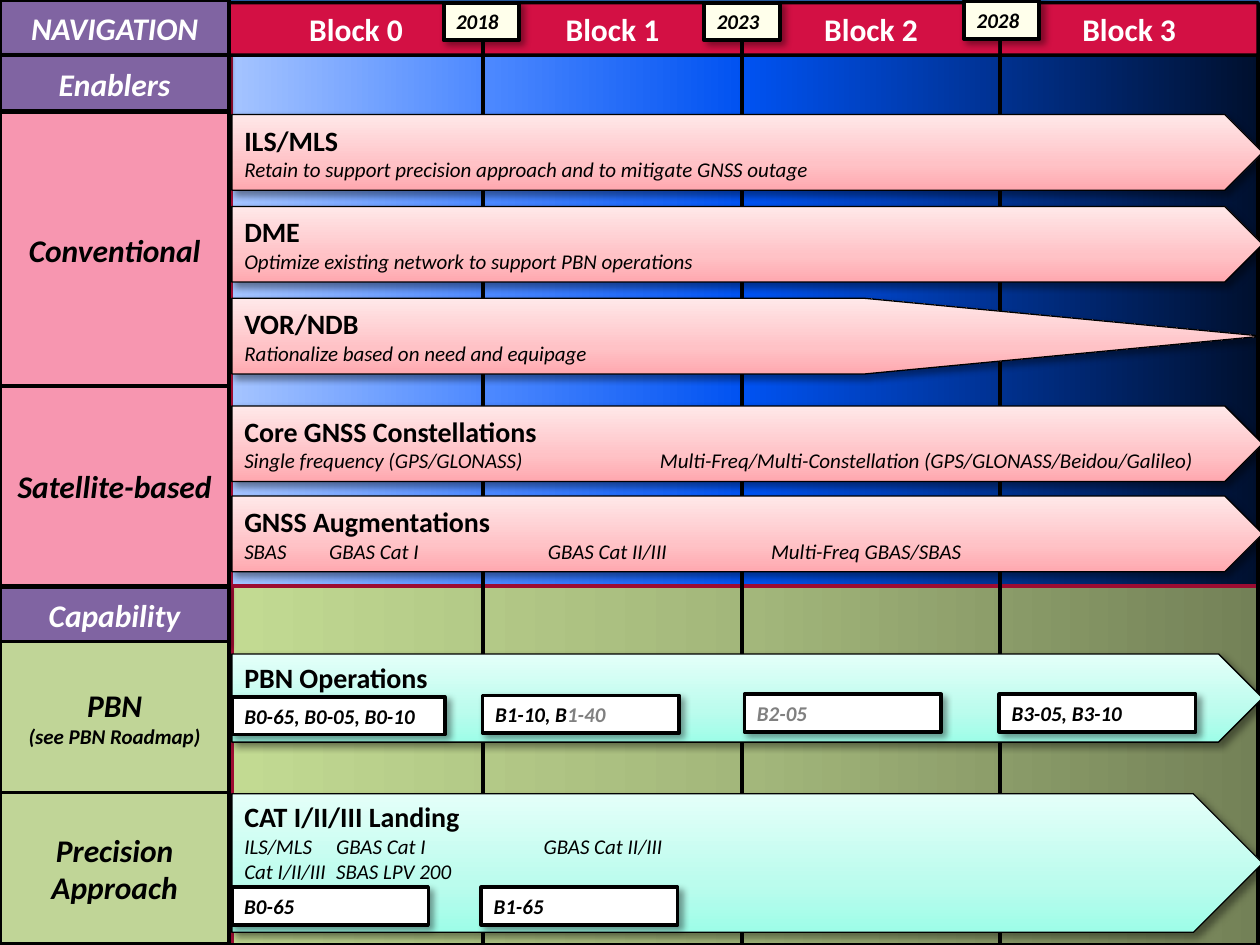
from dataclasses import dataclass

from lxml.etree import SubElement
from pptx import Presentation
from pptx.dml.color import RGBColor
from pptx.enum.shapes import MSO_SHAPE
from pptx.enum.text import MSO_ANCHOR, MSO_AUTO_SIZE, PP_ALIGN
from pptx.oxml.ns import qn
from pptx.util import Pt


@dataclass(frozen=True)
class Theme:
    font: str = "Calibri"
    black: str = "000000"
    white: str = "FFFFFF"
    grey: str = "808080"
    backdrop: str = "2C6ABA"
    crimson: str = "9C0C32"
    red: str = "D31044"
    purple: str = "8064A2"
    rose: str = "F796B0"
    olive: str = "C0D597"
    cream: str = "FFFFEB"
    large: float = 18
    medium: float = 16
    small: float = 12
    pink: tuple = (270, ((0, "FFA8AF"), (35, "FFC2C6"), (100, "FFE8E9")))
    mint: tuple = (270, ((0, "9DFDE8"), (35, "BBFCED"), (100, "E4FFF9")))
    green: tuple = (180, ((0, "738157"), (50, "A3B77B"), (100, "C2DA92")))
    blue: tuple = (0, ((0, "A5C4FF"), (25, "4C88FF"),
                       (50, "0052F1"), (100, "00102E")))
    soft: tuple = (40, 4, 3, 45)
    below: tuple = (38, 3.1, 1.6, 90)


T = Theme()
EDGES = (131, 276, 424, 571.5, 719)
ARROW_X, ARROW_W = 132.5, 589


def set_attrs(obj, **values):
    for name, value in values.items():
        setattr(obj, name, value)


def paint(sp, fill):
    if fill is None:
        sp.fill.background()
    elif isinstance(fill, str):
        sp.fill.solid()
        sp.fill.fore_color.rgb = RGBColor.from_string(fill)
    else:
        angle, stops = fill
        sp.fill.gradient()
        grad = sp._element.spPr.find(qn("a:gradFill"))
        gs_list = grad.find(qn("a:gsLst"))
        gs_list.clear()
        for pos, color in stops:
            gs = SubElement(gs_list, qn("a:gs"), pos=str(pos * 1000))
            SubElement(gs, qn("a:srgbClr"), val=color)
        grad.find(qn("a:lin")).set("ang", str(angle * 60000))


def cast_shadow(sp, shadow):
    sp.shadow.inherit = False
    if shadow:
        alpha, blur, dist, angle = shadow
        effects = sp._element.spPr.find(qn("a:effectLst"))
        outer = SubElement(effects, qn("a:outerShdw"), blurRad=str(Pt(blur)),
                           dist=str(Pt(dist)), dir=str(angle * 60000),
                           rotWithShape="0")
        color = SubElement(outer, qn("a:srgbClr"), val=T.black)
        SubElement(color, qn("a:alpha"), val=str(alpha * 1000))


def style(sp, box, fill, line=T.black, width=2, shadow=None):
    set_attrs(sp, **dict(zip(("left", "top", "width", "height"), map(Pt, box))))
    paint(sp, fill)
    sp.line.color.rgb = RGBColor.from_string(line)
    sp.line.width = Pt(width)
    cast_shadow(sp, shadow)
    return sp


def add_block(s, box, fill, kind=MSO_SHAPE.RECTANGLE, **look):
    return style(s.shapes.add_shape(kind, *map(Pt, box)), box, fill, **look)


def run(text, size=T.small, color=T.black, bold=True, italic=True):
    return text, color, dict(size=Pt(size), bold=bold, italic=italic, name=T.font)


def write(sp, lines, align=PP_ALIGN.LEFT, anchor=MSO_ANCHOR.MIDDLE,
          grow=False, tabs=()):
    tf = sp.text_frame
    size = MSO_AUTO_SIZE.SHAPE_TO_FIT_TEXT if grow else MSO_AUTO_SIZE.NONE
    set_attrs(tf, word_wrap=True, vertical_anchor=anchor, auto_size=size)
    for i, runs in enumerate(lines):
        p = tf.add_paragraph() if i else tf.paragraphs[0]
        p.alignment = align
        if tabs and i:
            tab_list = SubElement(p._p.get_or_add_pPr(), qn("a:tabLst"))
            for pos in tabs:
                SubElement(tab_list, qn("a:tab"), pos=str(Pt(pos)), algn="l")
        for text, color, fmt in runs:
            r = p.add_run()
            r.text = text
            set_attrs(r.font, **fmt)
            r.font.color.rgb = RGBColor.from_string(color)


def add_label(s, top, height, fill, text, note=None):
    head = fill == T.purple
    sp = add_block(s, (0, top, EDGES[0], height), fill,
                   width=2.25 if head else 2, shadow=T.below if head else None)
    lines = [[run(text, T.large, T.white if head else T.black)]]
    if note:
        lines.append([run(note)])
    write(sp, lines, PP_ALIGN.CENTER)


def add_arrow(s, top, height, fill, title, details=(), tabs=(), point=0.5,
              anchor=MSO_ANCHOR.MIDDLE):
    sp = add_block(s, (ARROW_X, top, ARROW_W, height), fill,
                   MSO_SHAPE.PENTAGON, width=0.75, shadow=T.soft)
    sp.adjustments[0] = point
    lines = [[run(title, T.medium, italic=False)]]
    lines += [[run(text, bold=False)] for text in details]
    write(sp, lines, anchor=anchor, tabs=tabs)


def add_tag(s, left, top, width, *runs, fill=T.white, line_width=2,
            anchor=MSO_ANCHOR.MIDDLE):
    sp = add_block(s, (left, top, width, 21.6), fill, width=line_width,
                   shadow=T.soft)
    write(sp, [runs], grow=True, anchor=anchor)


def add_columns(s):
    spans = list(zip(EDGES, EDGES[1:]))
    for left, right in spans:
        add_block(s, (left, 15, right - left, 525), None)
    for i, (left, right) in enumerate(spans):
        sp = add_block(s, (left, 1.5, right - left, 30), T.red,
                       MSO_SHAPE.ROUNDED_RECTANGLE)
        sp.adjustments[0] = 0.02
        write(sp, [[run(f"Block {i}", T.large, T.white, italic=False)]],
              PP_ALIGN.CENTER)
    for left, top, year in ((253.5, 1.5, "2018"), (402.5, 1.5, "2023"),
                            (551, 0.8, "2028")):
        add_tag(s, left, top, 43, run(year), fill=T.cream, line_width=2.25,
                anchor=MSO_ANCHOR.TOP)


def main():
    prs = Presentation()
    set_attrs(prs, slide_width=Pt(720), slide_height=Pt(540))
    s = prs.slides.add_slide(prs.slide_layouts[5])
    s.background.fill.solid()
    s.background.fill.fore_color.rgb = RGBColor.from_string(T.backdrop)

    title = style(s.shapes.title, (0, 0, EDGES[0], 31.5), T.purple, width=2.25)
    write(title, [[run("NAVIGATION", T.large, T.white)]], PP_ALIGN.CENTER)

    add_block(s, (133, 334, 587, 206), T.green, line=T.crimson)
    add_block(s, (132, 29, 587, 306), T.blue, line=T.crimson)
    add_columns(s)

    for label in (
        (31.7, 32, T.purple, "Enablers"),
        (64, 157.5, T.rose, "Conventional"),
        (220.5, 114.5, T.rose, "Satellite-based"),
        (335.5, 32, T.purple, "Capability"),
        (366.5, 86.5, T.olive, "PBN", "(see PBN Roadmap)"),
        (453, 86.5, T.olive, "Precision Approach"),
    ):
        add_label(s, *label)

    for top, name, detail, tabs, point in (
        (65.5, "ILS/MLS", "Retain to support precision approach and to "
         "mitigate GNSS outage", (), 0.5),
        (118, "DME", "Optimize existing network to support PBN operations",
         (), 0.5),
        (170.5, "VOR/NDB", "Rationalize based on need and equipage", (), 5.26),
        (232, "Core GNSS Constellations", "Single frequency (GPS/GLONASS)\t"
         "Multi-Freq/Multi-Constellation (GPS/GLONASS/Beidou/Galileo)",
         (237.5,), 0.5),
        (283.5, "GNSS Augmentations", "SBAS\tGBAS Cat I\tGBAS Cat II/III\t"
         "Multi-Freq GBAS/SBAS", (48.5, 173.5, 301), 0.5),
    ):
        add_arrow(s, top, 43.2, T.pink, name, [detail], tabs, point)

    add_arrow(s, 373.7, 50.4, T.mint, "PBN Operations", anchor=MSO_ANCHOR.TOP)
    add_arrow(s, 453.6, 79.2, T.mint, "CAT I/II/III Landing",
              ["ILS/MLS\tGBAS Cat I\tGBAS Cat II/III",
               "Cat I/II/III\tSBAS LPV 200"],
              (52.5, 171), anchor=MSO_ANCHOR.TOP)

    add_tag(s, ARROW_X, 398.2, 121.7, run("B0-65, B0-05, B0-10"))
    add_tag(s, 275.8, 397.4, 112.3, run("B1-10, B"), run("1-40", color=T.grey))
    add_tag(s, 425.5, 396.7, 112.3, run("B2-05", color=T.grey))
    add_tag(s, 571, 396.7, 112.3, run("B3-05, B3-10"))
    add_tag(s, ARROW_X, 507, 112.3, run("B0-65"))
    add_tag(s, 275, 507, 112.3, run("B1-65"))

    prs.save("out.pptx")


if __name__ == "__main__":
    main()
